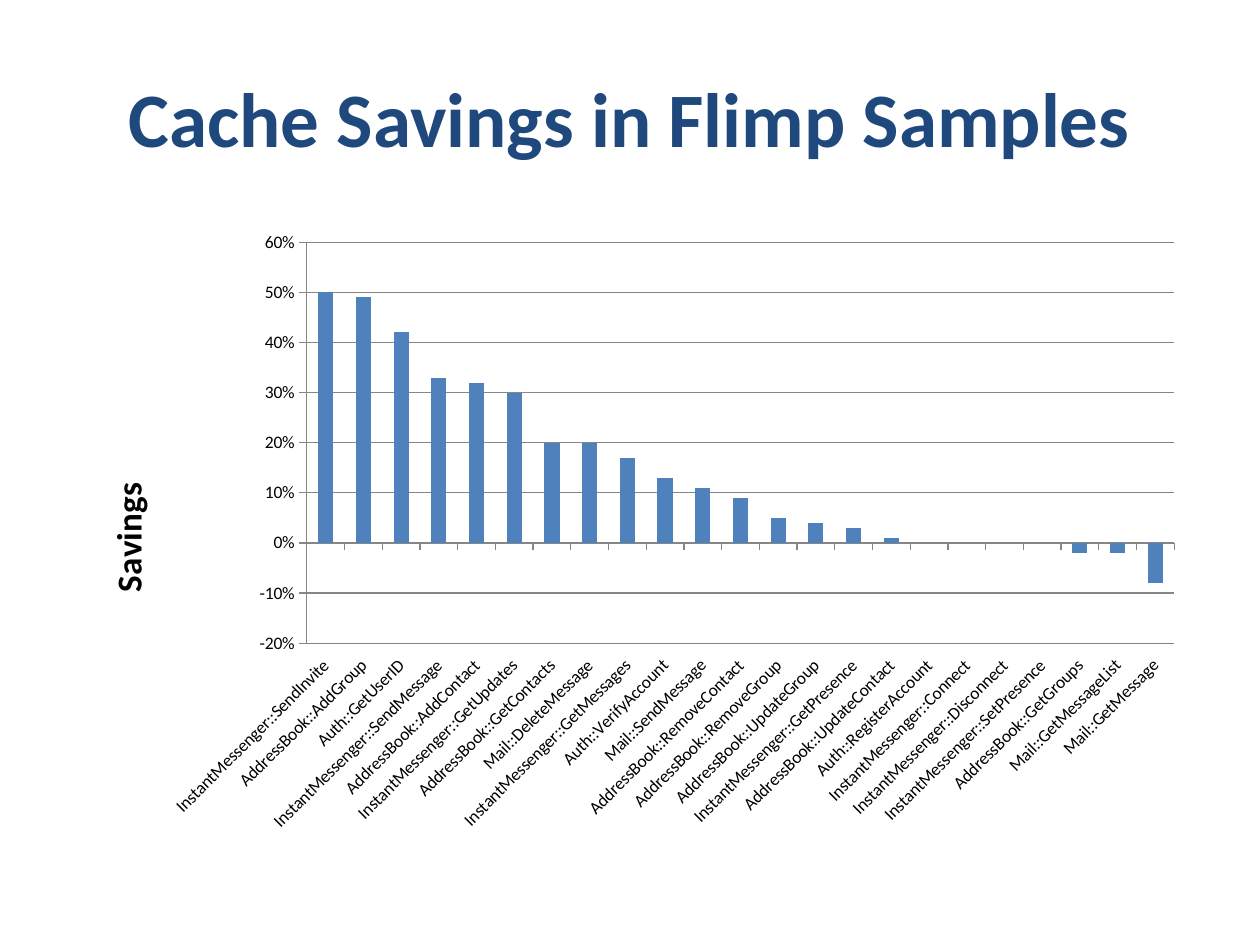
from lxml.etree import SubElement
from pptx import Presentation
from pptx.chart.data import CategoryChartData
from pptx.dml.color import RGBColor
from pptx.enum.chart import XL_CHART_TYPE, XL_TICK_LABEL_POSITION, XL_TICK_MARK
from pptx.enum.text import MSO_ANCHOR, PP_ALIGN
from pptx.oxml.ns import qn
from pptx.util import Inches, Pt

NAVY = RGBColor(0x1F, 0x49, 0x7D)
BLUE = RGBColor(0x4F, 0x81, 0xBD)
GREY = RGBColor(0x86, 0x86, 0x86)
BLACK = RGBColor(0, 0, 0)

SAVINGS = {
    "InstantMessenger::SendInvite": 0.5,
    "AddressBook::AddGroup": 0.49,
    "Auth::GetUserID": 0.42,
    "InstantMessenger::SendMessage": 0.33,
    "AddressBook::AddContact": 0.32,
    "InstantMessenger::GetUpdates": 0.3,
    "AddressBook::GetContacts": 0.2,
    "Mail::DeleteMessage": 0.2,
    "InstantMessenger::GetMessages": 0.17,
    "Auth::VerifyAccount": 0.13,
    "Mail::SendMessage": 0.11,
    "AddressBook::RemoveContact": 0.09,
    "AddressBook::RemoveGroup": 0.05,
    "AddressBook::UpdateGroup": 0.04,
    "InstantMessenger::GetPresence": 0.03,
    "AddressBook::UpdateContact": 0.01,
    "Auth::RegisterAccount": 0,
    "InstantMessenger::Connect": 0,
    "InstantMessenger::Disconnect": 0,
    "InstantMessenger::SetPresence": 0,
    "AddressBook::GetGroups": -0.02,
    "Mail::GetMessageList": -0.02,
    "Mail::GetMessage": -0.08,
}


def place(part, index, **shares):
    """Give a chart part a manual layout in shares of the chart's size."""
    for old in part.findall(qn("c:layout")):
        part.remove(old)
    layout = SubElement(part, qn("c:layout"))
    part.insert(index, layout)
    manual = SubElement(layout, qn("c:manualLayout"))
    if "w" in shares:
        SubElement(manual, qn("c:layoutTarget")).set("val", "inner")
    for side in "xy":
        SubElement(manual, qn(f"c:{side}Mode")).set("val", "edge")
    for name, share in shares.items():
        SubElement(manual, qn(f"c:{name}")).set("val", str(share))


class Deck:
    font_name = "Calibri"

    def __init__(self, width, height):
        self.presentation = Presentation()
        self.presentation.slide_width = Inches(width)
        self.presentation.slide_height = Inches(height)
        self.slide = self.presentation.slides.add_slide(
            self.presentation.slide_layouts[5])

    def box(self, left, top, width, height):
        """Turn shares of the slide's size into lengths."""
        across = self.presentation.slide_width
        down = self.presentation.slide_height
        return (int(left * across), int(top * down),
                int(width * across), int(height * down))

    def style(self, font, size, color, bold=False):
        font.name, font.size, font.bold = self.font_name, Pt(size), bold
        font.color.rgb = color

    def title(self, wording, *shares):
        heading = self.slide.shapes.title
        heading.left, heading.top, heading.width, heading.height = self.box(*shares)
        heading.text_frame.text = wording
        heading.text_frame.vertical_anchor = MSO_ANCHOR.MIDDLE
        paragraph = heading.text_frame.paragraphs[0]
        paragraph.alignment = PP_ALIGN.CENTER
        self.style(paragraph.font, 44, NAVY, bold=True)

    def column_chart(self, values, axis_name, *shares):
        data = CategoryChartData(number_format="0%")
        data.categories = list(values)
        data.add_series("Series 1", list(values.values()))
        chart = self.slide.shapes.add_chart(
            XL_CHART_TYPE.COLUMN_CLUSTERED, *self.box(*shares), data).chart
        chart.has_legend = chart.has_title = False
        self.style(chart.font, 10, BLACK)

        # Columns
        plot = chart.plots[0]
        plot.gap_width, plot.vary_by_categories = 150, False
        columns = plot.series[0]
        columns.invert_if_negative = False
        columns.format.fill.solid()
        columns.format.fill.fore_color.rgb = BLUE

        # Axes and gridlines
        methods, scale = chart.category_axis, chart.value_axis
        for axis in (methods, scale):
            axis.tick_label_position = XL_TICK_LABEL_POSITION.LOW
            axis.major_tick_mark = XL_TICK_MARK.OUTSIDE
            axis.minor_tick_mark = XL_TICK_MARK.NONE
            self.style(axis.tick_labels.font, 10, BLACK)
            self.line(axis.format.line)
        body = methods._element.find(qn("c:txPr")).find(qn("a:bodyPr"))
        body.set("rot", str(-45 * 60000))
        body.set("vert", "horz")
        scale.minimum_scale, scale.maximum_scale, scale.major_unit = -0.2, 0.6, 0.1
        scale.tick_labels.number_format = "0%"
        scale.tick_labels.number_format_is_linked = False
        scale.has_major_gridlines = True
        self.line(scale.major_gridlines.format.line)

        # Axis title
        frame = scale.axis_title.text_frame
        frame.text = axis_name
        self.style(frame.paragraphs[0].font, 20, BLACK, bold=True)
        turned = frame._txBody.find(qn("a:bodyPr"))
        turned.set("rot", str(-90 * 60000))
        turned.set("vert", "horz")
        place(scale.axis_title._element, 1, x=0.03, y=0.41)
        place(chart._chartSpace.chart.plotArea, 0, x=0.215, y=0.035, w=0.765, h=0.643)

    def line(self, line):
        line.color.rgb, line.width = GREY, Pt(0.75)

    def save(self):
        self.presentation.save("out.pptx")


def main():
    deck = Deck(10, 7.5)
    deck.title("Cache Savings in Flimp Samples", 0.05, 0.04, 0.9, 1 / 6)
    deck.column_chart(SAVINGS, "Savings", 0.05, 0.7 / 3, 0.9, 0.66)
    deck.save()


if __name__ == "__main__":
    main()
